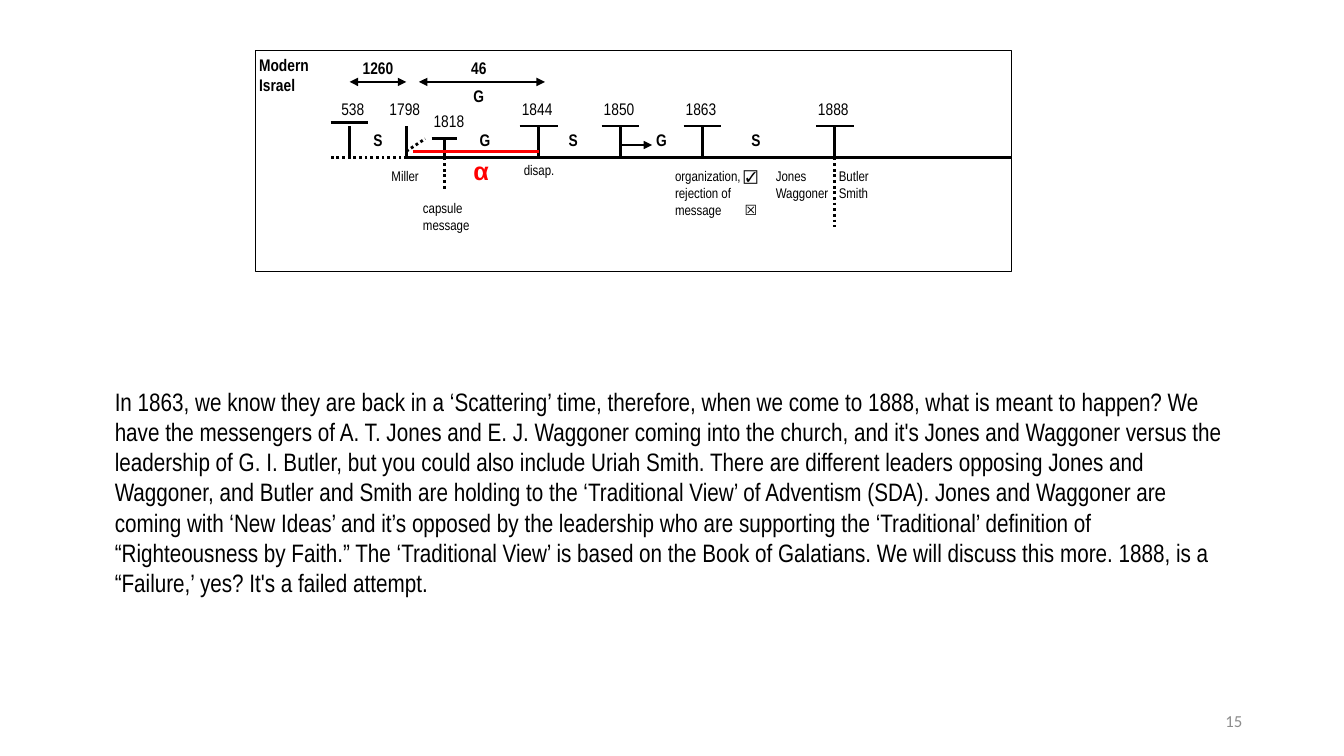
import pptx
import pptx.util
import pptx.dml.color
import pptx.enum.dml
import pptx.enum.shapes
import pptx.enum.text
import lxml.etree

Inch = pptx.util.Inches
Align = pptx.enum.text.PP_ALIGN
Anchor = pptx.enum.text.MSO_ANCHOR
NS = "http://schemas.openxmlformats.org/drawingml/2006/main"
WIDE, HIGH = 13.33, 7.5
COLS, ROWS = 120, 35  # grid of the timeline
AXIS = 17             # row of the time axis
BLACK, RED, GREY = "000000", "FF0000", "8C8C8C"

YEAR = {"size": 12}
BOLD = {"size": 12, "bold": True}
NOTE = {"size": 10}
ALPHA = {"size": 18, "bold": True, "name": "Arial", "color": RED}

BODY = (
    "In 1863, we know they are back in a ‘Scattering’ time, therefore, when we come to 1888, "
    "what is meant to happen? We have the messengers of A. T. Jones and E. J. Waggoner coming "
    "into the church, and it's Jones and Waggoner versus the leadership of G. I. Butler, but you "
    "could also include Uriah Smith. There are different leaders opposing Jones and Waggoner, and "
    "Butler and Smith are holding to the ‘Traditional View’ of Adventism (SDA). Jones and Waggoner "
    "are coming with ‘New Ideas’ and it’s opposed by the leadership who are supporting the "
    "‘Traditional’ definition of “Righteousness by Faith.” The ‘Traditional View’ is based on the "
    "Book of Galatians. We will discuss this more. 1888, is a “Failure,’ yes? It's a failed attempt.")


def paint(code):
    return pptx.dml.color.RGBColor.from_string(code)


def add(root, tag, **attrs):
    return lxml.etree.SubElement(root, f"{{{NS}}}{tag}", attrs)


def write(slide, box, lines, form, align=Align.LEFT, pad=(0.04, 0.04), anchor=Anchor.TOP):
    """Each line is a string or a list of (text, font changes) runs."""
    shape = slide.shapes.add_textbox(*map(Inch, box))
    frame = shape.text_frame
    side, top = map(Inch, pad)
    look = {"word_wrap": True, "vertical_anchor": anchor, "margin_left": side,
            "margin_right": side, "margin_top": top, "margin_bottom": top}
    for key, value in look.items():
        setattr(frame, key, value)
    for i, line in enumerate(lines):
        para = frame.paragraphs[0] if i == 0 else frame.add_paragraph()
        para.alignment = align
        for text, change in [(line, {})] if isinstance(line, str) else line:
            run = para.add_run()
            run.text = text
            font = {"name": "Arial Narrow", "color": BLACK, **form, **change}
            run.font.color.rgb = paint(font.pop("color"))
            font["size"] = pptx.util.Pt(font["size"])
            for key, value in font.items():
                setattr(run.font, key, value)
    return frame


def rule(slide, start, end, color=BLACK, dots=False, heads=()):
    link = slide.shapes.add_connector(
        pptx.enum.shapes.MSO_CONNECTOR.STRAIGHT, *map(Inch, (*start, *end)))
    link.line.color.rgb = paint(color)
    link.line.width = pptx.util.Pt(2)
    if dots:
        link.line.dash_style = pptx.enum.dml.MSO_LINE.ROUND_DOT
    for head in heads:
        add(link.line._get_or_add_ln(), head, type="triangle")
    add(link._element.spPr, "effectLst")


def timeline(slide, left, top, width, height):
    unit, step = width / COLS, height / ROWS

    def at(col, row):
        return left + col * unit, top + row * step

    def line(a, b, **look):
        rule(slide, at(*a), at(*b), **look)

    def label(col, row, wide, high, lines, form, align=Align.CENTER):
        box = (*at(col, row), wide * unit, high * step)
        return write(slide, box, lines, form, align)

    # Frame and axis
    frame = slide.shapes.add_shape(
        pptx.enum.shapes.MSO_SHAPE.RECTANGLE, *map(Inch, (left, top, width, height)))
    frame.shadow.inherit = False
    frame.fill.background()
    frame.line.color.rgb = paint(BLACK)
    frame.line.width = pptx.util.Pt(0.25)
    line((24, AXIS), (COLS, AXIS))
    line((25, AXIS), (12, AXIS), dots=True)

    # Years: stem column, stem top, crossbar row, half crossbar, label column and row
    for year, col, peak, bar, half, start, row in [
            ("538", 15, 12, 11.5, 3, 11.75, 7), ("1798", 24, 12, 12, 0, 20, 7),
            ("1818", 30, 14, 14, 2, 27, 9), ("1844", 45, 12, 12, 3, 41, 7),
            ("1850", 58, 12, 12, 3, 54, 7), ("1863", 71, 12, 12, 3, 67, 7),
            ("1888", 92, 12, 12, 3, 88, 7)]:
        line((col, peak), (col, AXIS))
        if half:
            line((col - half, bar), (col + half, bar))
        label(start, row, 7.5, 4.5, [year], YEAR)

    # Spans and arrows
    for a, b in [(15, 24), (26, 46)]:
        line((a, 5), (b, 5), heads=("headEnd", "tailEnd"))
    line((58, 15), (63, 15), heads=("tailEnd",))
    for a, b in [((24, 16), (27, 14)), ((30, AXIS), (30, 22)), ((92, AXIS), (92, 28))]:
        line(a, b, dots=True)
    line((25, 16), (45, 16), color=RED)
    label(16, 0.5, 7, 5, ["1260"], BOLD)
    label(33.5, 0.5, 4, 4.5, ["46"], BOLD)

    # Scattering and gathering
    for mark, col, row in [("S", 17, 12), ("G", 34, 12), ("S", 48, 12),
                           ("G", 62, 12), ("S", 77, 12), ("G", 33, 5)]:
        label(col, row, 5, 5, [mark], BOLD)

    # Notes below the axis
    for col, row, wide, high, lines in [
            (42, 17, 10, 5, ["disap."]), (21, 18, 7, 5, ["Miller"]),
            (26, 23, 9, 8, ["capsule message"]),
            (82, 18, 10, 10, ["Jones", "Waggoner"]),
            (92, 18, 10, 10, ["Butler", "Smith"])]:
        label(col, row, wide, high, lines, NOTE, Align.LEFT)
    sign = {"name": "Arial"}
    votes = label(66, 18, 15, 10, [
        [("organization, ", {}), ("☑", sign)],
        [("rejection of message\t", {}), ("☒", sign)]], NOTE, Align.LEFT)
    tabs = add(votes.paragraphs[1]._p.get_or_add_pPr(), "tabLst")
    add(tabs, "tab", pos=str(Inch(0.69)), algn="l")

    # Headings
    label(34, 16, 5, 6.5, ["α"], ALPHA, Align.LEFT)
    label(0, 0, 10.25, 7.5, ["Modern", "Israel"], BOLD, Align.LEFT)


def story(slide, *box):
    write(slide, box, [BODY], {"size": 18}, pad=(0.1, 0.05))


def footer(slide, *box):
    write(slide, box, ["15"], {"size": 12, "name": "Calibri", "color": GREY},
          Align.RIGHT, (0.1, 0.05), Anchor.MIDDLE)


def main():
    deck = pptx.Presentation()
    deck.slide_width, deck.slide_height = Inch(WIDE), Inch(HIGH)
    slide = deck.slides.add_slide(deck.slide_layouts[6])
    timeline(slide, 2.53, 0.5, 7.5, 2.19)
    story(slide, 1.04, 3.78, 11.26, 2.22)
    footer(slide, 9.42, 6.95, 3, 0.4)
    deck.save("out.pptx")


if __name__ == "__main__":
    main()
